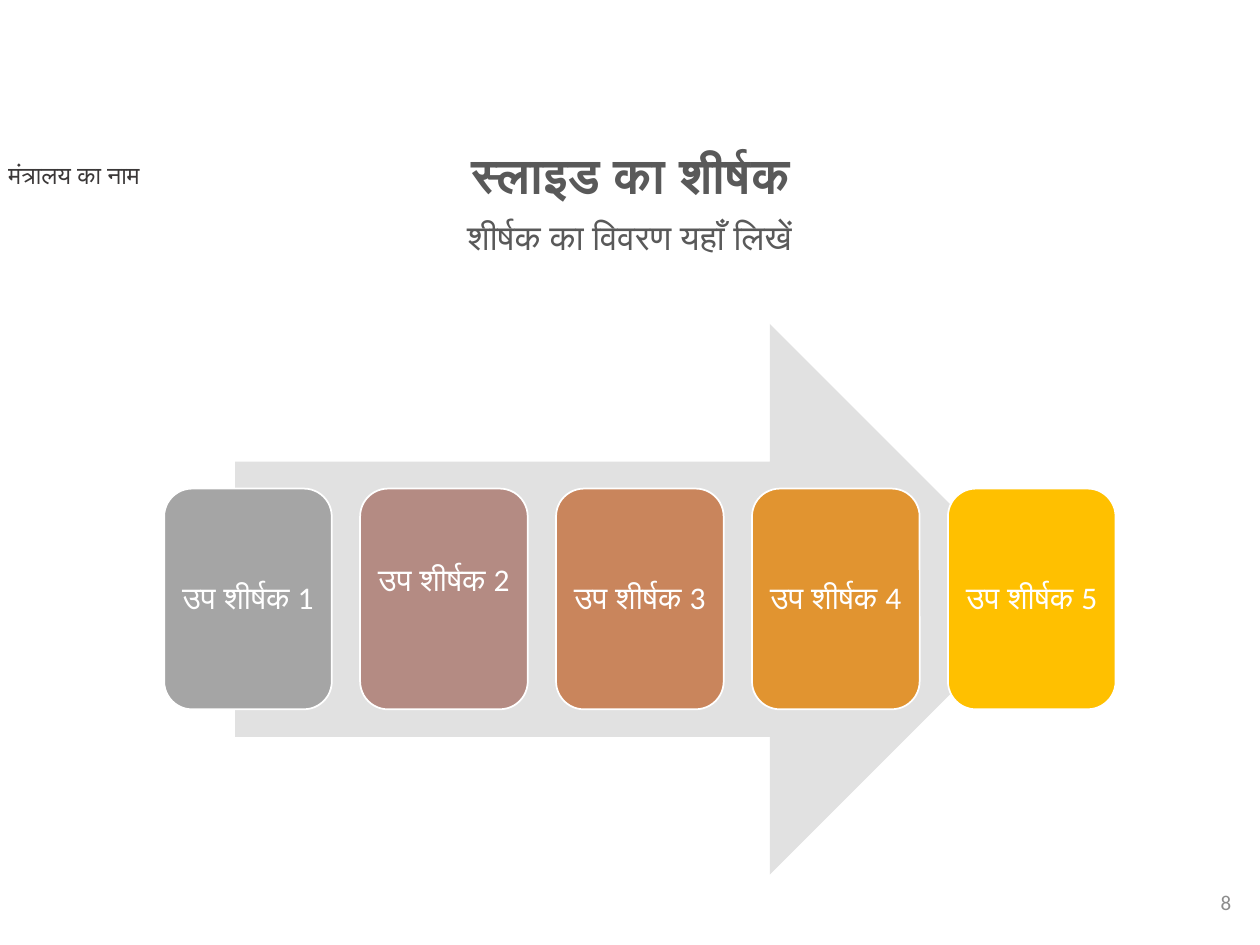
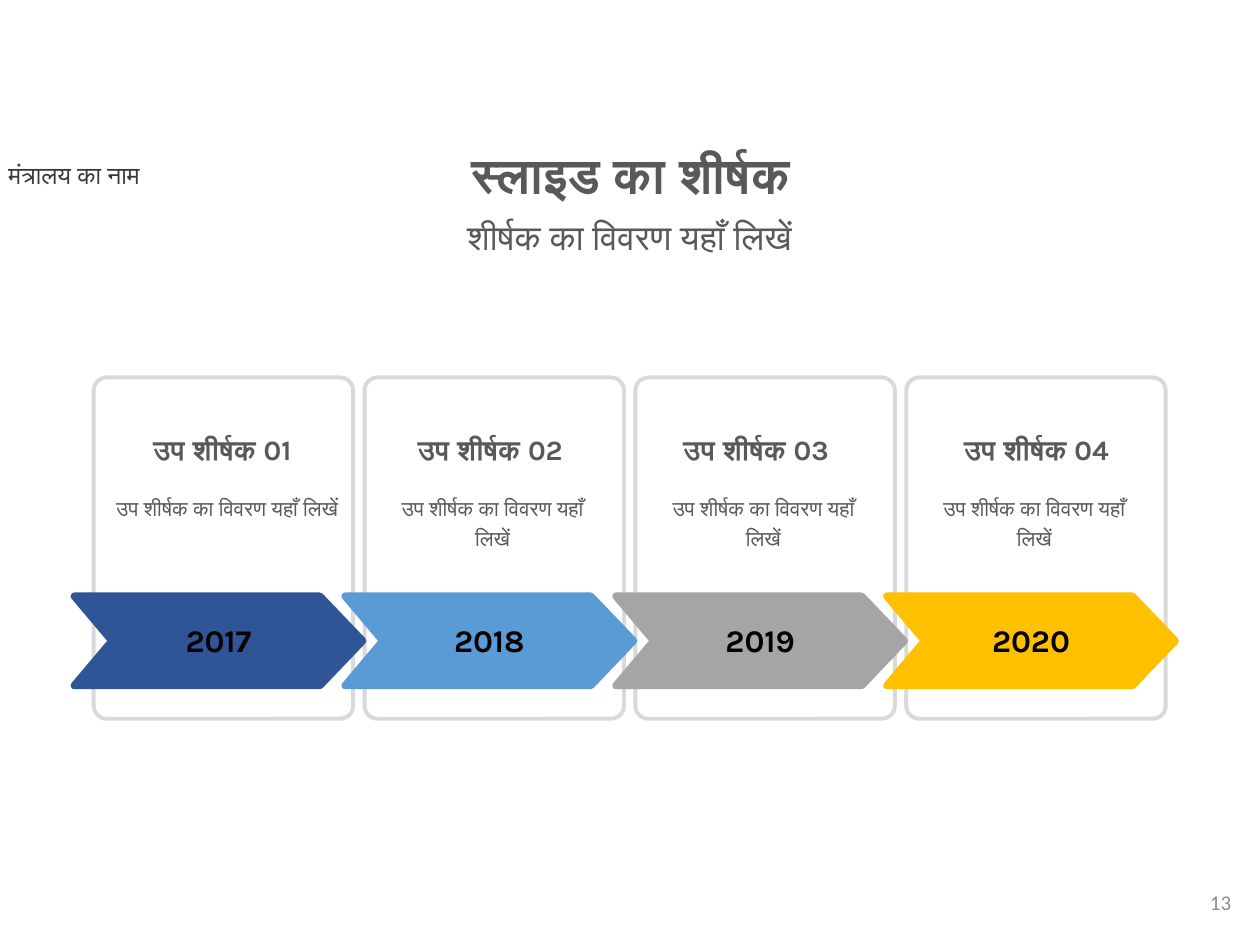
from lxml.etree import SubElement
from pptx import Presentation
from pptx.dml.color import RGBColor
from pptx.enum.shapes import MSO_SHAPE as SHAPE
from pptx.enum.text import MSO_ANCHOR as ANCHOR, MSO_AUTO_SIZE as FIT, PP_ALIGN as ALIGN
from pptx.oxml.ns import qn
from pptx.util import Cm, Pt

DARK = RGBColor(0x3B, 0x38, 0x38)
TEXT = RGBColor(0x59, 0x59, 0x59)
PAGE_GREY = RGBColor(0x8C, 0x8C, 0x8C)
ARROW_GREY = RGBColor(0xE1, 0xE1, 0xE1)
BORDER = RGBColor(0xD9, 0xD9, 0xD9)
BLACK = RGBColor(0, 0, 0)
WHITE = RGBColor(0xFF, 0xFF, 0xFF)
GREY = RGBColor(0xA5, 0xA5, 0xA5)
ROSE = RGBColor(0xB4, 0x8B, 0x83)
COPPER = RGBColor(0xC9, 0x85, 0x5C)
ORANGE = RGBColor(0xE1, 0x94, 0x30)
GOLD = RGBColor(0xFF, 0xC0, 0x00)
NAVY = RGBColor(0x2F, 0x55, 0x97)
BLUE = RGBColor(0x5B, 0x9B, 0xD5)

BODY_FONT, NUMBER_FONT, DETAIL_FONT = "Calibri", "Karla", "Open Sans"

SUBHEAD = "उप शीर्षक"
STEP_COLORS = [GREY, ROSE, COPPER, ORANGE, GOLD]
STEP_PITCH = 3.95
# year, colour, centre of heading, width of description
MILESTONES = [
    ("2017", NAVY, 4.48, 4.72),
    ("2018", BLUE, 9.88, 4.5),
    ("2019", GREY, 15.24, 4.5),
    ("2020", GOLD, 20.89, 4.5),
]
CARD_PITCH = 5.46
CHEVRON_OUTLINE = [(0.1, 0.08), (5.05, 0.08), (5.91, 0.98),
                   (5.05, 1.88), (0.1, 1.88), (0.86, 0.98)]


def place(sp, left, top, width, height):
    sp.left, sp.top, sp.width, sp.height = Cm(left), Cm(top), Cm(width), Cm(height)


def style(p, size, color, font=BODY_FONT, bold=False, align=ALIGN.CENTER, spacing=1.0):
    p.alignment = align
    p.line_spacing = spacing
    p.font.size = Pt(size)
    p.font.name = font
    p.font.bold = bold
    p.font.color.rgb = color


def add_text(slide, box, text, size, color, anchor=ANCHOR.TOP, **looks):
    sp = slide.shapes.add_textbox(*map(Cm, box))
    tf = sp.text_frame
    tf.word_wrap = True
    tf.vertical_anchor = anchor
    p = tf.paragraphs[0]
    p.text = text
    style(p, size, color, **looks)
    return tf


def set_margins(tf, across, down):
    tf.margin_left = tf.margin_right = Cm(across)
    tf.margin_top = tf.margin_bottom = Cm(down)


def paint(sp, fill=None, line=None, width=1):
    sp.shadow.inherit = False
    if fill is None:
        sp.fill.background()
    else:
        sp.fill.solid()
        sp.fill.fore_color.rgb = fill
    if line is None:
        sp.line.fill.background()
    else:
        sp.line.color.rgb = line
        sp.line.width = Pt(width)


def fill_placeholder(sp, box, text, size, bold):
    place(sp, *box)
    tf = sp.text_frame
    tf.text = text
    tf.auto_size = FIT.NONE
    tf.vertical_anchor = ANCHOR.TOP
    p = tf.paragraphs[0]
    p.space_before = Pt(0)
    style(p, size, TEXT, bold=bold, spacing=0.9)


def add_base_slide(prs, number):
    """Add a slide with the title, subtitle, ministry name and page number."""
    slide = prs.slides.add_slide(prs.slide_layouts[0])
    fill_placeholder(slide.shapes.title, (4.72, 2.92, 15.98, 1.19),
                     "स्लाइड का शीर्षक", 28, True)
    fill_placeholder(slide.placeholders[1], (3.71, 4.32, 17.96, 1.6),
                     "शीर्षक का विवरण यहाँ लिखें", 20, False)
    add_text(slide, (-0.08, 3.1, 5.54, 0.86), "मंत्रालय का नाम", 14, DARK,
             align=ALIGN.LEFT)
    add_text(slide, (19.35, 17.68, 5.72, 1.02), number, 12, PAGE_GREY,
             anchor=ANCHOR.MIDDLE, align=ALIGN.RIGHT)
    return slide


def add_step(slide, index, color):
    sp = slide.shapes.add_shape(SHAPE.ROUNDED_RECTANGLE, Cm(3.31 + index * STEP_PITCH),
                                Cm(9.85), Cm(3.38), Cm(4.45))
    paint(sp, color, WHITE)
    tf = sp.text_frame
    tf.word_wrap = True
    tf.vertical_anchor = ANCHOR.MIDDLE
    set_margins(tf, 0.2, 0.2)
    if index == 1:  # the second label sits higher than its neighbours
        tf.margin_bottom = Cm(0.9)
    p = tf.paragraphs[0]
    p.text = f"{SUBHEAD} {index + 1}"
    style(p, 18, WHITE, spacing=0.9)


def add_card(slide, left):
    sp = slide.shapes.add_shape(SHAPE.ROUNDED_RECTANGLE, Cm(left), Cm(7.61),
                                Cm(5.23), Cm(6.88))
    sp.adjustments[0] = 0.05
    paint(sp, line=BORDER, width=2.25)


def add_chevron(slide, left, color):
    """Draw a chevron whose corners are rounded by its own outline."""
    points = [(Cm(left + x), Cm(11.94 + y)) for x, y in CHEVRON_OUTLINE]
    builder = slide.shapes.build_freeform(*points[0])
    builder.add_line_segments(points[1:], close=True)
    sp = builder.convert_to_shape()
    paint(sp, color, color, 4.25)
    SubElement(sp.line._get_or_add_ln(), qn("a:round"))


def add_card_text(slide, index, year, center, detail_width):
    shift = index * CARD_PITCH
    add_text(slide, (3.35 + shift, 12.4, 2.11, 1.02), year, 18, BLACK,
             anchor=ANCHOR.MIDDLE, font=NUMBER_FONT, bold=True)
    tf = add_text(slide, (2.22 + shift, 9.83, detail_width, 1.3),
                  "उप शीर्षक का विवरण यहाँ लिखें", 12, TEXT, font=DETAIL_FONT, spacing=1.2)
    set_margins(tf, 0.1, 0.05)
    tf = add_text(slide, (center - 2.4, 8.59, 4.8, 0.94), SUBHEAD, 16, TEXT,
                  anchor=ANCHOR.BOTTOM, bold=True)
    r = tf.paragraphs[0].add_run()
    r.text = f" {index + 1:02d}"
    r.font.name = NUMBER_FONT


def build_process(prs):
    slide = add_base_slide(prs, "8")
    arrow = slide.shapes.add_shape(SHAPE.RIGHT_ARROW, Cm(4.74), Cm(6.53),
                                   Cm(16.33), Cm(11.1))
    paint(arrow, ARROW_GREY)
    for i, color in enumerate(STEP_COLORS):
        add_step(slide, i, color)


def build_timeline(prs):
    slide = add_base_slide(prs, "13")
    for i in range(len(MILESTONES)):
        add_card(slide, 1.89 + i * CARD_PITCH)
    for i, (year, color, center, detail_width) in enumerate(MILESTONES):
        add_chevron(slide, 1.4 + i * CARD_PITCH, color)
        add_card_text(slide, i, year, center, detail_width)


def main():
    prs = Presentation()
    prs.slide_width, prs.slide_height = Cm(25.4), Cm(19.05)
    build_process(prs)
    build_timeline(prs)
    prs.save("out.pptx")


if __name__ == "__main__":
    main()
